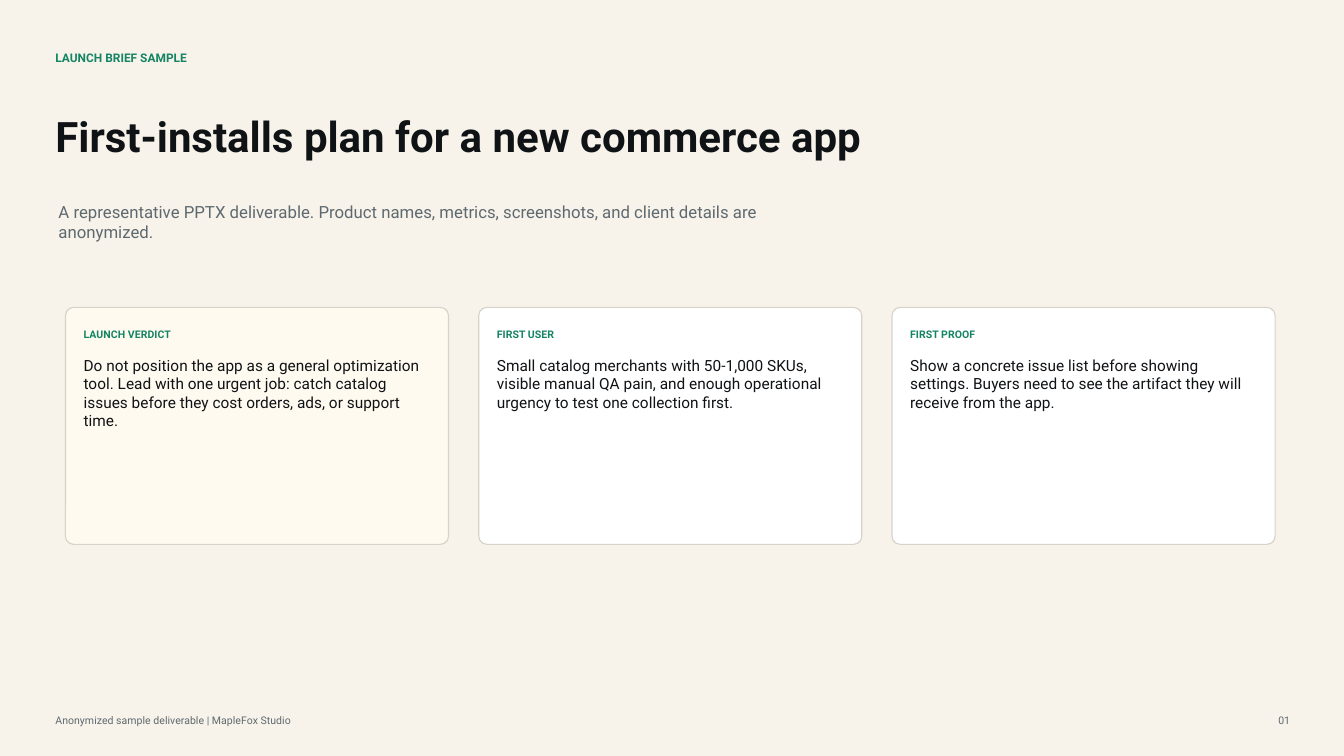
from dataclasses import dataclass

from pptx import Presentation
from pptx.dml.color import RGBColor
from pptx.enum.shapes import MSO_SHAPE
from pptx.enum.text import MSO_ANCHOR, PP_ALIGN
from pptx.util import Pt


@dataclass(frozen=True)
class Theme:
    font: str = "Roboto"
    background: str = "F7F3EA"
    ink: str = "101316"
    muted: str = "5E696F"
    accent: str = "148463"
    border: str = "D8D3C9"
    card: str = "FFFFFF"
    highlight: str = "FFFAF0"
    title_size: float = 30
    subtitle_size: float = 12
    body_size: float = 11
    eyebrow_size: float = 8.5
    small_size: float = 7.5


THEME = Theme()

CARD_LEFT, CARD_TOP = 46.8, 219.6
CARD_WIDTH, CARD_HEIGHT = 273.6, 169.2
CARD_GAP = 21.6
CARD_PADDING = 12.96

CARDS = [
    ("LAUNCH VERDICT",
     "Do not position the app as a general optimization tool. Lead with one urgent job: "
     "catch catalog issues before they cost orders, ads, or support time.",
     THEME.highlight),
    ("FIRST USER",
     "Small catalog merchants with 50-1,000 SKUs, visible manual QA pain, and enough "
     "operational urgency to test one collection first.",
     THEME.card),
    ("FIRST PROOF",
     "Show a concrete issue list before showing settings. Buyers need to see the artifact "
     "they will receive from the app.",
     THEME.card),
]


def color(value):
    return RGBColor.from_string(value)


def add_text(slide, text, left, top, width, height, size, ink,
             bold=False, anchor=MSO_ANCHOR.MIDDLE, align=PP_ALIGN.LEFT):
    text_frame = slide.shapes.add_textbox(Pt(left), Pt(top), Pt(width), Pt(height)).text_frame
    text_frame.margin_left = text_frame.margin_right = 0
    text_frame.margin_top = text_frame.margin_bottom = 0
    text_frame.word_wrap = True
    text_frame.vertical_anchor = anchor
    text_frame.text = text
    paragraph = text_frame.paragraphs[0]
    paragraph.alignment = align
    font = paragraph.runs[0].font
    font.name = THEME.font
    font.size = Pt(size)
    font.bold = bold
    font.color.rgb = color(ink)


def add_card(slide, left, label, body, fill):
    shape = slide.shapes.add_shape(MSO_SHAPE.ROUNDED_RECTANGLE, Pt(left), Pt(CARD_TOP),
                                   Pt(CARD_WIDTH), Pt(CARD_HEIGHT))
    shape.adjustments[0] = 0.034
    shape.shadow.inherit = False
    shape.fill.solid()
    shape.fill.fore_color.rgb = color(fill)
    shape.line.color.rgb = color(THEME.border)
    shape.line.width = Pt(0.8)
    text_left = left + CARD_PADDING
    text_width = CARD_WIDTH - 2 * CARD_PADDING
    add_text(slide, label, text_left, CARD_TOP + 11.52, text_width, 15.84,
             THEME.small_size, THEME.accent, bold=True)
    add_text(slide, body, text_left, CARD_TOP + 34.56, text_width, 124.56,
             THEME.body_size, THEME.ink, anchor=MSO_ANCHOR.TOP)


def add_heading(slide):
    add_text(slide, "LAUNCH BRIEF SAMPLE", 39.6, 32.4, 338.4, 18,
             THEME.eyebrow_size, THEME.accent, bold=True)
    add_text(slide, "First-installs plan for a new commerce app", 39.6, 59.04, 597.6, 75.6,
             THEME.title_size, THEME.ink, bold=True)
    add_text(slide, "A representative PPTX deliverable. Product names, metrics, screenshots, "
             "and client details are anonymized.", 41.76, 140.4, 518.4, 36,
             THEME.subtitle_size, THEME.muted)


def add_footer(slide):
    add_text(slide, "Anonymized sample deliverable | MapleFox Studio", 39.6, 507.6, 489.6, 14.4,
             THEME.small_size, THEME.muted)
    add_text(slide, "01", 885.6, 507.6, 36, 14.4,
             THEME.small_size, THEME.muted, align=PP_ALIGN.RIGHT)


def main():
    presentation = Presentation()
    presentation.slide_width = Pt(960)
    presentation.slide_height = Pt(540)
    slide = presentation.slides.add_slide(presentation.slide_layouts[6])
    slide.background.fill.solid()
    slide.background.fill.fore_color.rgb = color(THEME.background)
    add_heading(slide)
    for index, (label, body, fill) in enumerate(CARDS):
        add_card(slide, CARD_LEFT + index * (CARD_WIDTH + CARD_GAP), label, body, fill)
    add_footer(slide)
    presentation.save("out.pptx")


if __name__ == "__main__":
    main()
